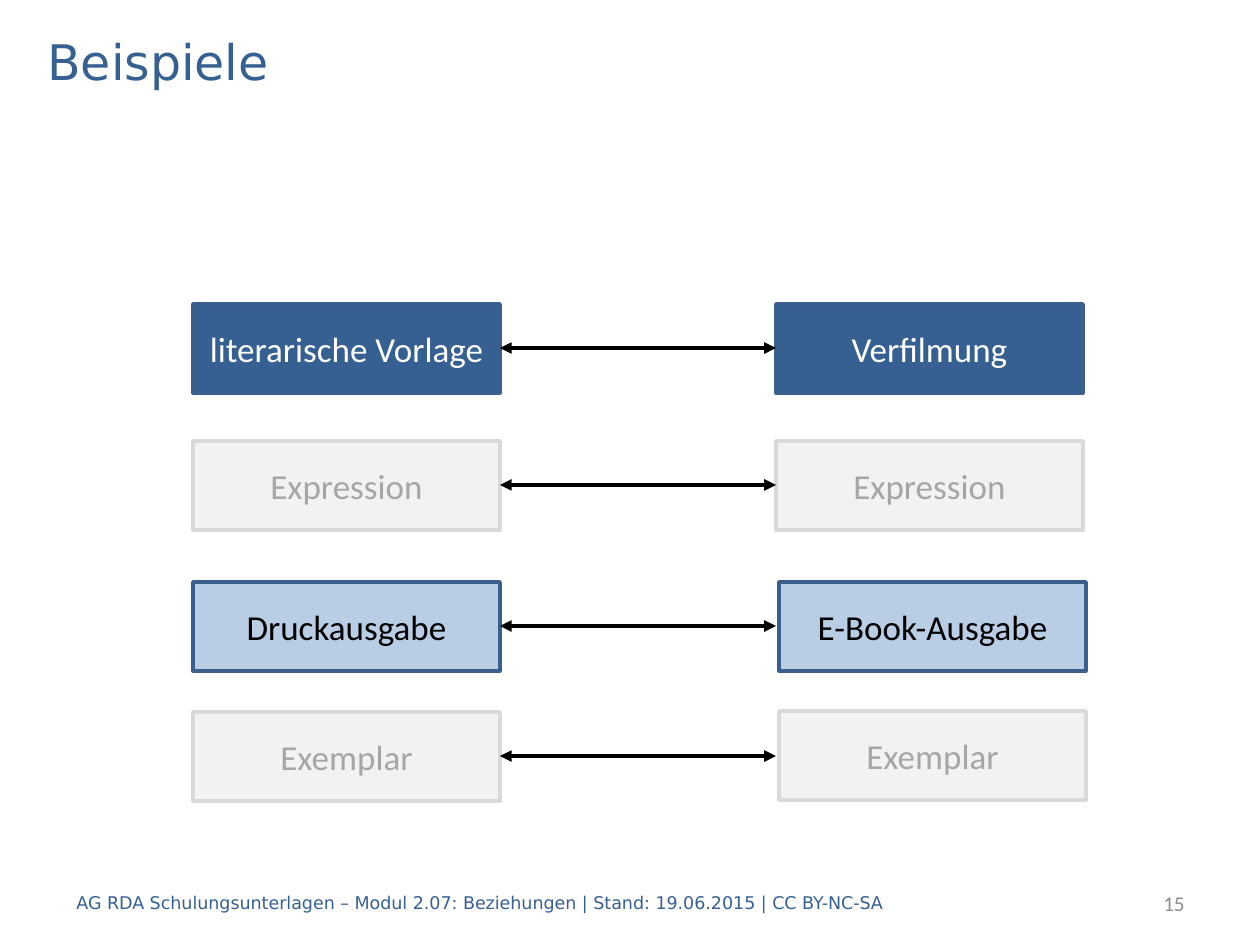
"""Build a slide of example relationships between paired entities."""
from dataclasses import dataclass

from lxml.etree import SubElement
from pptx import Presentation
from pptx.dml.color import RGBColor
from pptx.enum.shapes import MSO_CONNECTOR, MSO_SHAPE
from pptx.enum.text import MSO_ANCHOR, PP_ALIGN
from pptx.oxml.ns import qn
from pptx.shapes.base import BaseShape
from pptx.slide import Slide
from pptx.util import Emu, Pt

EMU_PER_PX = 914400 / 126
BOX_WIDTH, BOX_HEIGHT = 307, 89
LEFT_X, RIGHT_X = 193, 776


@dataclass(frozen=True)
class Style:
    """Colours of one kind of entity box."""
    fill: str
    line: str
    text: str


@dataclass(frozen=True)
class Theme:
    """Fonts, sizes and colours of the slide."""
    heading_font: str = "DejaVu Sans"
    body_font: str = "Calibri"
    title_size: int = 28
    box_size: int = 20
    number_size: int = 12
    footer_size: int = 10
    box_line: float = 2
    arrow_line: float = 2.25
    accent: str = "376092"
    number: str = "8C8C8C"
    arrow: str = "000000"
    work: Style = Style("376092", "3A5F8C", "FFFFFF")
    manifestation: Style = Style("B9CDE5", "3A5F8C", "000000")
    muted: Style = Style("F2F2F2", "D9D9D9", "A6A6A6")


@dataclass(frozen=True)
class Relation:
    """Two related entities on one row."""
    top: int
    left_text: str
    right_text: str
    style: Style
    right_shift: int = 0
    right_rise: int = 0


THEME = Theme()
RELATIONS = (
    Relation(304, "literarische Vorlage", "Verfilmung", THEME.work),
    Relation(441, "Expression", "Expression", THEME.muted),
    Relation(582, "Druckausgabe", "E-Book-Ausgabe", THEME.manifestation, 3),
    Relation(712, "Exemplar", "Exemplar", THEME.muted, 3, 1),
)


def px(value: int) -> Emu:
    """Turn pixels into EMU."""
    return Emu(round(value * EMU_PER_PX))


def write(shape: BaseShape, text: str, *, font: str, size: int, color: str,
          align: PP_ALIGN = PP_ALIGN.LEFT) -> None:
    """Put one formatted, vertically centred paragraph into a shape."""
    frame = shape.text_frame
    frame.word_wrap = True
    frame.vertical_anchor = MSO_ANCHOR.MIDDLE
    para = frame.paragraphs[0]
    para.alignment = align
    span = para.add_run()
    span.text = text
    span.font.name = font
    span.font.size = Pt(size)
    span.font.color.rgb = RGBColor.from_string(color)


def add_text(slide: Slide, left: int, top: int, width: int, height: int,
             text: str, **text_format) -> None:
    """Add a text box."""
    box = slide.shapes.add_textbox(px(left), px(top), px(width), px(height))
    write(box, text, **text_format)


def add_entity(slide: Slide, left: int, top: int, text: str, style: Style) -> None:
    """Add one entity box."""
    box = slide.shapes.add_shape(MSO_SHAPE.RECTANGLE, px(left), px(top),
                                 px(BOX_WIDTH), px(BOX_HEIGHT))
    box.shadow.inherit = False
    box.fill.solid()
    box.fill.fore_color.rgb = RGBColor.from_string(style.fill)
    box.line.color.rgb = RGBColor.from_string(style.line)
    box.line.width = Pt(THEME.box_line)
    write(box, text, font=THEME.body_font, size=THEME.box_size,
          color=style.text, align=PP_ALIGN.CENTER)


def add_double_arrow(slide: Slide, start: int, end: int, middle: int) -> None:
    """Add a horizontal line with an arrowhead at each end."""
    arrow = slide.shapes.add_connector(MSO_CONNECTOR.STRAIGHT, px(start),
                                       px(middle), px(end), px(middle))
    arrow.line.color.rgb = RGBColor.from_string(THEME.arrow)
    arrow.line.width = Pt(THEME.arrow_line)
    for end_name in ("a:headEnd", "a:tailEnd"):
        SubElement(arrow.line._get_or_add_ln(), qn(end_name), type="triangle")
    SubElement(arrow._element.spPr, qn("a:effectLst"))


def add_relation(slide: Slide, relation: Relation) -> None:
    """Add a pair of entity boxes and the arrow between them."""
    add_entity(slide, LEFT_X, relation.top, relation.left_text, relation.style)
    add_entity(slide, RIGHT_X + relation.right_shift,
               relation.top - relation.right_rise,
               relation.right_text, relation.style)
    add_double_arrow(slide, LEFT_X + BOX_WIDTH, RIGHT_X,
                     relation.top + BOX_HEIGHT // 2)


def main() -> None:
    """Build and save the deck."""
    deck = Presentation()
    deck.slide_width, deck.slide_height = px(1260), px(945)
    slide = deck.slides.add_slide(deck.slide_layouts[6])
    add_text(slide, 35, 25, 1191, 71, "Beispiele", font=THEME.heading_font,
             size=THEME.title_size, color=THEME.accent)
    add_text(slide, 64, 878, 1062, 50,
             "AG RDA Schulungsunterlagen – Modul 2.07: Beziehungen | "
             "Stand: 19.06.2015 | CC BY-NC-SA",
             font=THEME.heading_font, size=THEME.footer_size, color=THEME.accent)
    add_text(slide, 997, 878, 200, 50, "15", font=THEME.body_font,
             size=THEME.number_size, color=THEME.number, align=PP_ALIGN.RIGHT)
    for relation in RELATIONS:
        add_relation(slide, relation)
    deck.save("out.pptx")


if __name__ == "__main__":
    main()
